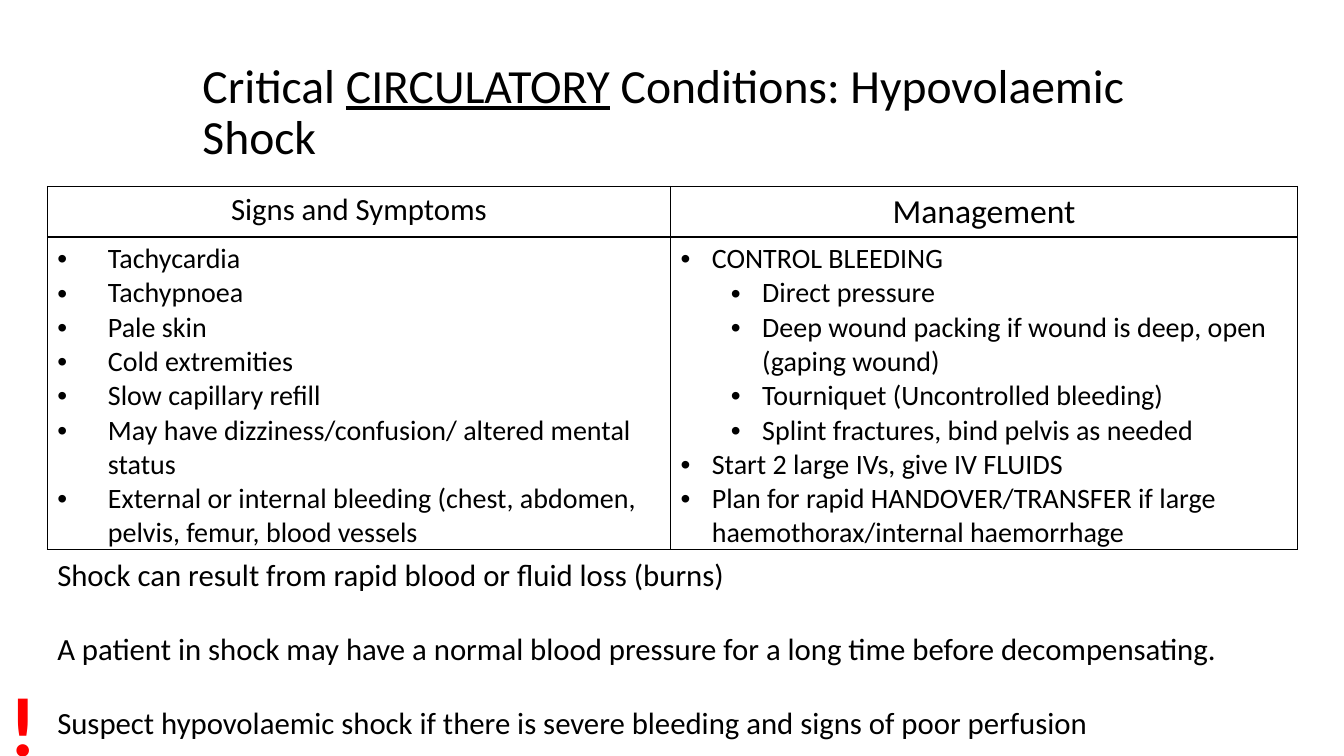
from dataclasses import dataclass

from lxml.etree import SubElement
from pptx import Presentation
from pptx.dml.color import RGBColor as Rgb
from pptx.enum.text import MSO_ANCHOR as Anchor, PP_ALIGN as Align
from pptx.oxml import parse_xml
from pptx.oxml.ns import nsdecls, qn
from pptx.util import Inches, Pt


@dataclass(frozen=True)
class Theme:
    font: str = "Calibri"
    ink: str = "000000"
    alert: str = "FF0000"
    title_size: int = 34
    management_size: int = 24
    text_size: int = 22
    bullet_size: int = 20
    alert_size: int = 60


SIGNS = [
    "Tachycardia",
    "Tachypnoea",
    "Pale skin",
    "Cold extremities",
    "Slow capillary refill",
    "May have dizziness/confusion/ altered mental status",
    "External or internal bleeding (chest, abdomen, pelvis, femur, blood vessels",
]
MANAGEMENT = [
    (0, "CONTROL BLEEDING"),
    (1, "Direct pressure"),
    (1, "Deep wound packing if wound is deep, open (gaping wound)"),
    (1, "Tourniquet (Uncontrolled bleeding)"),
    (1, "Splint fractures, bind pelvis as needed"),
    (0, "Start 2 large IVs, give IV FLUIDS"),
    (0, "Plan for rapid HANDOVER/TRANSFER if large haemothorax/internal haemorrhage"),
]
REMARKS = [
    "Shock can result from rapid blood or fluid loss (burns)",
    "A patient in shock may have a normal blood pressure for a long time before decompensating.",
    "Suspect hypovolaemic shock if there is severe bleeding and signs of poor perfusion",
]


class SlideBuilder:
    def __init__(self, slide, theme):
        self.slide = slide
        self.theme = theme

    def add_text(self, para, text, size, color=None, bold=False, underline=False):
        span = para.add_run()
        span.text = text
        font = span.font
        font.name, font.size = self.theme.font, Pt(size)
        font.bold, font.underline = bold, underline
        font.color.rgb = Rgb.from_string(color or self.theme.ink)

    def paragraph(self, frame, number):
        return frame.add_paragraph() if number else frame.paragraphs[0]

    def text_box(self, left, top, width, height, anchor=Anchor.TOP):
        box = self.slide.shapes.add_textbox(
            Inches(left), Inches(top), Inches(width), Inches(height))
        frame = box.text_frame
        frame.word_wrap = True
        frame.vertical_anchor = anchor
        return frame

    def table(self, left, top, widths, heights):
        table = self.slide.shapes.add_table(
            len(heights), len(widths), Inches(left), Inches(top),
            Inches(sum(widths)), Inches(sum(heights))).table
        table.first_row = table.horz_banding = False
        for column, width in zip(table.columns, widths):
            column.width = Inches(width)
        for row, height in zip(table.rows, heights):
            row.height = Inches(height)
        for cell in table.iter_cells():
            cell.fill.background()
            self.border(cell)
        return table

    def border(self, cell):
        properties = cell._tc.get_or_add_tcPr()
        for position, side in enumerate(("lnL", "lnR", "lnT", "lnB")):
            properties.insert(position, parse_xml(
                f'<a:{side} {nsdecls("a")} w="{Pt(1)}"><a:solidFill>'
                f'<a:srgbClr val="{self.theme.ink}"/></a:solidFill></a:{side}>'))

    def heading(self, cell, text, size):
        para = cell.text_frame.paragraphs[0]
        para.alignment = Align.CENTER
        self.add_text(para, text, size)

    def bullets(self, cell, items, hanging):
        """Fill a cell with (level, text) items; each level adds half an inch."""
        for number, (level, text) in enumerate(items):
            para = self.paragraph(cell.text_frame, number)
            para.level = level
            properties = para._p.get_or_add_pPr()
            properties.set("marL", str(Inches(hanging + level * 0.5)))
            properties.set("indent", str(-Inches(hanging)))
            SubElement(properties, qn("a:buFont"), typeface="Arial")
            SubElement(properties, qn("a:buChar"), char="•")
            self.add_text(para, text, self.theme.bullet_size)


def main():
    deck = Presentation()
    deck.slide_width, deck.slide_height = Inches(13.33), Inches(7.5)
    theme = Theme()
    page = SlideBuilder(deck.slides.add_slide(deck.slide_layouts[6]), theme)

    title = page.text_box(1.91, 0.4, 10.51, 1.45, Anchor.MIDDLE).paragraphs[0]
    title.line_spacing = 0.9
    page.add_text(title, "Critical ", theme.title_size)
    page.add_text(title, "CIRCULATORY", theme.title_size, underline=True)
    page.add_text(title, " Conditions: Hypovolaemic Shock", theme.title_size)

    table = page.table(0.47, 1.85, widths=(6.18, 6.22), heights=(0.49, 2.82))
    page.heading(table.cell(0, 0), "Signs and Symptoms", theme.text_size)
    page.heading(table.cell(0, 1), "Management", theme.management_size)
    page.bullets(table.cell(1, 0), [(0, sign) for sign in SIGNS], hanging=0.5)
    page.bullets(table.cell(1, 1), MANAGEMENT, hanging=0.31)

    remarks = page.text_box(0.47, 5.46, 12.87, 2.32)
    for number, remark in enumerate(REMARKS):
        para = page.paragraph(remarks, number)
        if number:
            para.space_before = Pt(26.5)
        page.add_text(para, remark, theme.text_size)

    alert = page.text_box(-0.62, 6.62, 1.7, 1.11).paragraphs[0]
    alert.alignment = Align.CENTER
    page.add_text(alert, "!", theme.alert_size, color=theme.alert, bold=True)

    deck.save("out.pptx")


if __name__ == "__main__":
    main()
